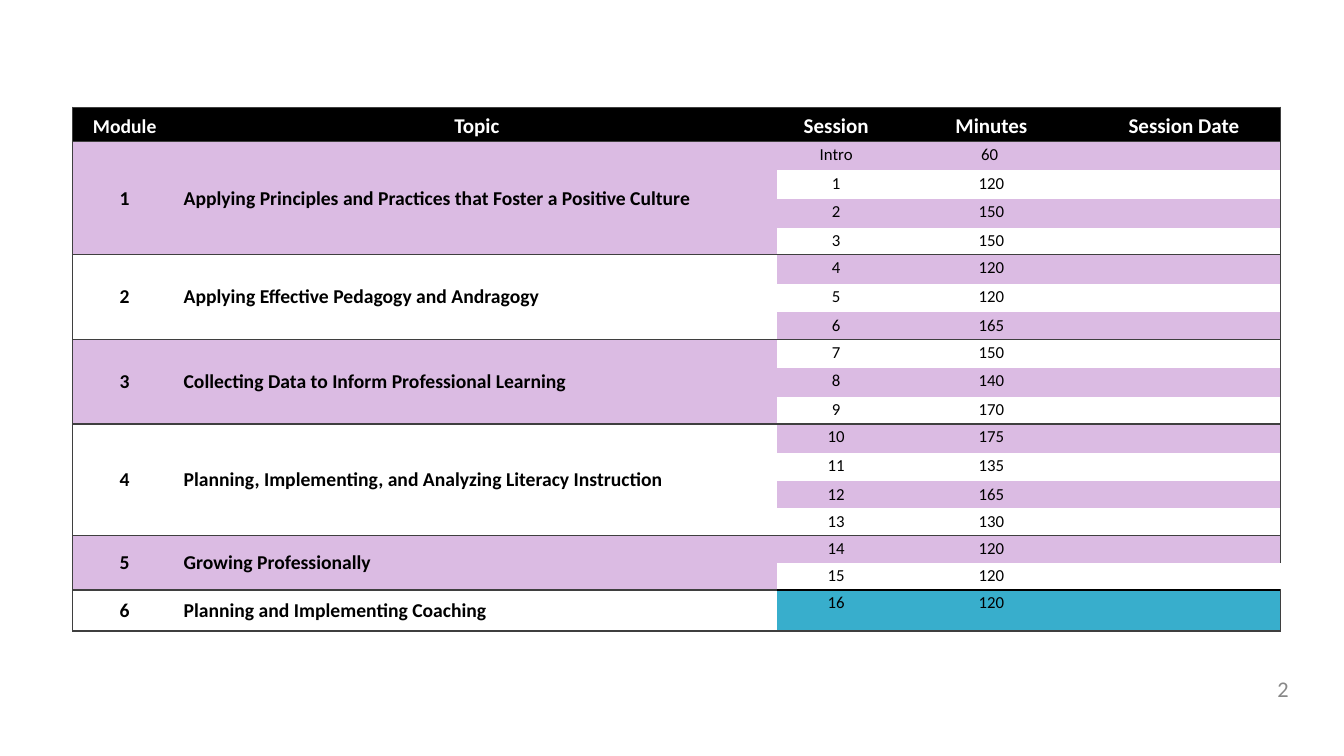
from lxml.etree import SubElement
from pptx import Presentation
from pptx.dml.color import RGBColor
from pptx.enum.text import MSO_ANCHOR as ANCHOR, PP_ALIGN as ALIGN
from pptx.oxml.ns import qn
from pptx.util import Pt

COLORS = {"black": "000000", "white": "FFFFFF", "lilac": "DBBBE3",
          "teal": "38AECC", "rule": "3F3F3F", "number": "888888"}
FONT = "Calibri"
NO_STYLE = "{2D5ABB26-0587-4C30-8999-92F81FD0307C}"
COLUMN_WIDTHS = [74.2, 429, 84.3, 137.5, 137.5]
ROW_HEIGHTS = ([24.7] + [20.5] * 3 + [19.4] + [20.5, 20.5, 19.4] * 3
               + [19.4] * 3 + [29.4])
HEADERS = ["Module", "Topic", "Session", "Minutes", "Session Date"]
MODULES = [
    ("Applying Principles and Practices that Foster a Positive Culture",
     [("Intro", "60 "), ("1", "120"), ("2", "150"), ("3", "150")]),
    ("Applying Effective Pedagogy and Andragogy",
     [("4", "120"), ("5", "120"), ("6", "165")]),
    ("Collecting Data to Inform Professional Learning",
     [("7", "150"), ("8", "140"), ("9", "170")]),
    ("Planning, Implementing, and Analyzing Literacy Instruction",
     [("10", "175"), ("11", "135"), ("12", "165"), ("13", "130")]),
    ("Growing Professionally", [("14", "120"), ("15", "120")]),
    ("Planning and Implementing Coaching", [("16", "120")]),
]


def rgb(name):
    return RGBColor.from_string(COLORS[name])


def write(tf, text, size=12, color="black", bold=False, align=ALIGN.CENTER):
    p = tf.paragraphs[0]
    p.alignment = align
    if not text:
        SubElement(p._p, qn("a:endParaRPr"), sz=str(size * 100))
        return
    r = p.add_run()
    r.text = text
    r.font.name = FONT
    r.font.size = Pt(size)
    r.font.bold = bold
    r.font.color.rgb = rgb(color)


def set_borders(cell, borders):
    tc_pr = cell._tc.get_or_add_tcPr()
    for side in "LRTB":
        color = borders.get(side)
        ln = SubElement(tc_pr, qn(f"a:ln{side}"), w=str(Pt(1) if color else 0))
        if color:
            fill = SubElement(ln, qn("a:solidFill"))
            SubElement(fill, qn("a:srgbClr"), val=COLORS[color])
        else:
            SubElement(ln, qn("a:noFill"))


def fill_cell(cell, text, fill, borders, anchor=ANCHOR.TOP, side=4.5, edge=2, **fmt):
    set_borders(cell, borders)
    cell.fill.solid()
    cell.fill.fore_color.rgb = rgb(fill)
    cell.vertical_anchor = anchor
    cell.margin_left = cell.margin_right = Pt(side)
    cell.margin_top = cell.margin_bottom = Pt(edge)
    write(cell.text_frame, text, **fmt)


def add_schedule(slide):
    frame = slide.shapes.add_table(len(ROW_HEIGHTS), len(COLUMN_WIDTHS), Pt(52), Pt(76.5),
                                   Pt(sum(COLUMN_WIDTHS)), Pt(sum(ROW_HEIGHTS)))
    table = frame.table
    table.first_row = table.horz_banding = False
    table._tbl.tblPr.find(qn("a:tableStyleId")).text = NO_STYLE
    for column, width in zip(table.columns, COLUMN_WIDTHS):
        column.width = Pt(width)
    for row, height in zip(table.rows, ROW_HEIGHTS):
        row.height = Pt(height)
    return table


def fill_header(table):
    for col, text in enumerate(HEADERS):
        borders = {"T": "rule", "B": "rule"}
        if col == 0:
            borders["L"] = "rule"
        if col == len(HEADERS) - 1:
            borders["R"] = "rule"
        fill_cell(table.cell(0, col), text, "black", borders, anchor=ANCHOR.BOTTOM,
                  size=15 if col else 14, color="white", bold=True)


def fill_session(table, row, values, first, last):
    fill = "lilac" if row % 2 else "white"
    top = bottom = "rule"
    if values[0] == "15":
        bottom = "black"
    if values[0] == "16":
        fill, top = "teal", "black"
    borders = {"T": top if first else None, "B": bottom if last else None}
    for col, text in enumerate((*values, ""), 2):
        if col == 4 and values[0] != "15":
            borders["R"] = "rule"
        fill_cell(table.cell(row, col), text, fill, borders)


def fill_module(table, number, topic, row, count):
    fill = "lilac" if number in (1, 3, 5) else "white"
    for col in (0, 1):
        if count > 1:
            table.cell(row, col).merge(table.cell(row + count - 1, col))
    borders = {"T": "rule", "B": "rule"}
    fmt = dict(anchor=ANCHOR.MIDDLE, side=5, size=14, bold=True)
    fill_cell(table.cell(row, 0), str(number), fill, {**borders, "L": "rule"}, edge=0, **fmt)
    fill_cell(table.cell(row, 1), topic, fill, borders, align=ALIGN.LEFT, **fmt)
    for below in range(row + 1, row + count):
        edge = {"B": "rule" if below == row + count - 1 else None}
        fill_cell(table.cell(below, 0), "", fill, {**edge, "L": "rule"})
        fill_cell(table.cell(below, 1), "", fill, edge)


def add_slide_number(slide, text):
    sp = slide.shapes.add_textbox(Pt(759.6), Pt(481), Pt(168), Pt(21.6))
    tf = sp.text_frame
    tf.word_wrap = True
    tf.vertical_anchor = ANCHOR.MIDDLE
    write(tf, text, size=16, color="number", align=ALIGN.RIGHT)


def main():
    prs = Presentation()
    prs.slide_width, prs.slide_height = Pt(960), Pt(540)
    slide = prs.slides.add_slide(prs.slide_layouts[6])
    table = add_schedule(slide)
    fill_header(table)
    row = 1
    for number, (topic, sessions) in enumerate(MODULES, 1):
        count = len(sessions)
        fill_module(table, number, topic, row, count)
        for i, values in enumerate(sessions):
            fill_session(table, row + i, values, i == 0, i == count - 1)
        row += count
    add_slide_number(slide, "2")
    prs.save("out.pptx")


if __name__ == "__main__":
    main()
